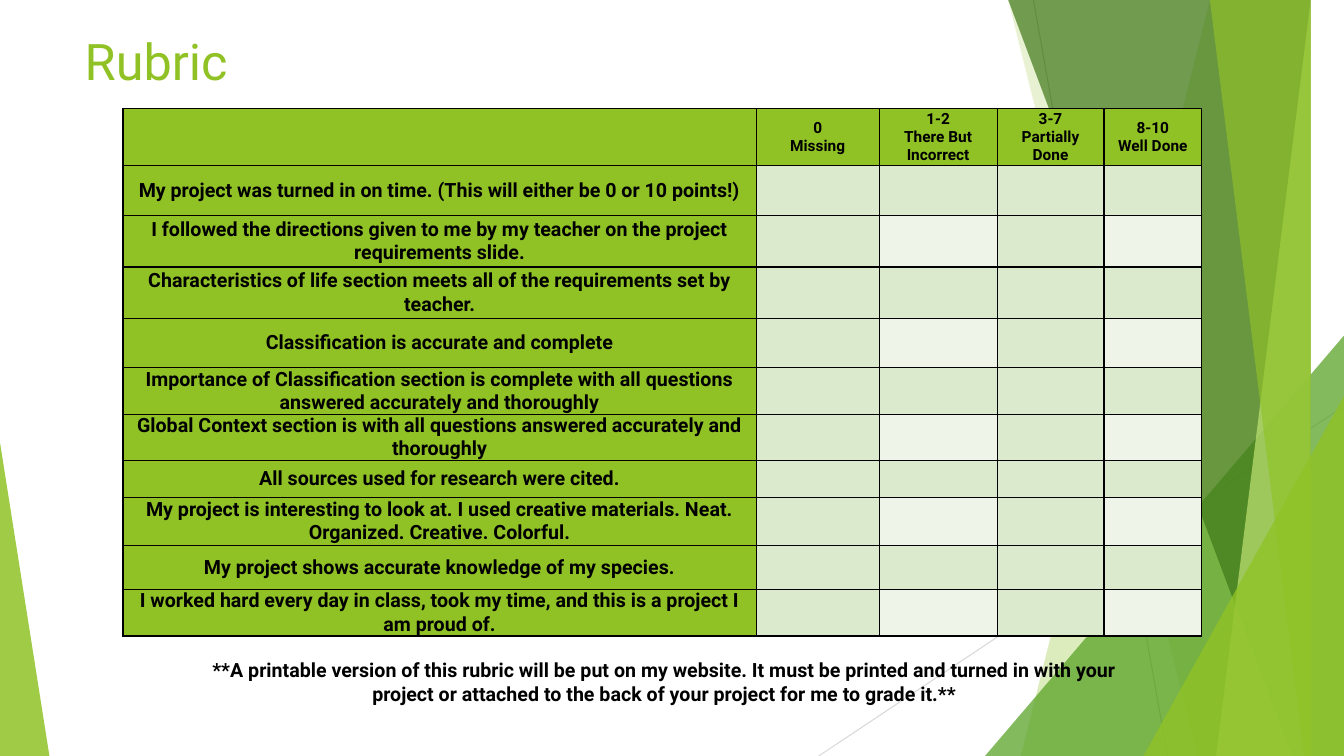
"""Build the project rubric slide."""
from dataclasses import dataclass

from lxml import etree
from pptx import Presentation
from pptx.dml.color import RGBColor
from pptx.enum.shapes import MSO_CONNECTOR, MSO_SHAPE
from pptx.enum.text import MSO_ANCHOR, MSO_AUTO_SIZE, PP_ALIGN
from pptx.oxml.ns import qn
from pptx.shapes.autoshape import Shape
from pptx.slide import Slide
from pptx.table import _Cell
from pptx.text.text import TextFrame
from pptx.util import Inches, Pt

STRAIGHT = MSO_CONNECTOR.STRAIGHT
TRIANGLE = MSO_SHAPE.ISOSCELES_TRIANGLE
TOP, MIDDLE = MSO_ANCHOR.TOP, MSO_ANCHOR.MIDDLE
LEFT, CENTER = PP_ALIGN.LEFT, PP_ALIGN.CENTER
FIXED = MSO_AUTO_SIZE.NONE
WIDE, HIGH = 13.33, 7.5


@dataclass(frozen=True)
class Theme:
    font: str = "Roboto"
    green: str = "90C226"
    leaf: str = "54A021"
    moss: str = "3F7819"
    lime: str = "C0E474"
    band: str = "DBE9CD"
    pale: str = "EEF4E8"
    ink: str = "000000"
    gray: str = "BFBFBF"
    mist: str = "D9D9D9"
    title: int = 36
    body: int = 14
    head: int = 11


THEME = Theme()


@dataclass(frozen=True)
class Ray:
    start: tuple[float, float]
    end: tuple[float, float]
    color: str


@dataclass(frozen=True)
class Shard:
    """A sheet from the slide's right edge to a slanted left side."""
    top: float
    base: float
    color: str
    alpha: int


@dataclass(frozen=True)
class Peak:
    left: float
    top: float
    width: float
    tip: float
    color: str
    alpha: int


RAYS = [
    Ray((10.25, 0), (11.58, HIGH), THEME.gray),
    Ray((WIDE, 4.03), (8.12, HIGH), THEME.mist),
]
FACETS = [
    Shard(12.28, 10.04, THEME.green, 30),
    Shard(10.5, 11.83, THEME.green, 20),
    Peak(9.77, 3.33, 3.56, 1, THEME.leaf, 72),
    Shard(10.21, 12.91, THEME.moss, 70),
    Shard(13.03, 11.92, THEME.lime, 70),
    Shard(11.96, 13.18, THEME.green, 65),
    Peak(11.34, 3.93, 1.99, 1, THEME.green, 80),
    Peak(0, 4.39, 0.49, 0, THEME.green, 85),
]
HEADS = ["", "0\nMissing", "1-2\nThere But Incorrect",
         "3-7\nPartially Done", "8-10\nWell Done"]
GOALS = [
    "My project was turned in on time. (This will either be 0 or 10 points!)",
    "I followed the directions given to me by my teacher on the project requirements slide.",
    "Characteristics of life section meets all of the requirements set by teacher.",
    "Classification is accurate and complete",
    "Importance of Classification section is complete with all questions answered accurately and thoroughly",
    "Global Context section is with all questions answered accurately and thoroughly",
    "All sources used for research were cited.",
    "My project is interesting to look at. I used creative materials. Neat. Organized. Creative. Colorful.",
    "My project shows accurate knowledge of my species.",
    "I worked hard every day in class, took my time, and this is a project I am proud of.",
]
WIDTHS = [6.28, 1.22, 1.17, 1.06, 0.97]
HEIGHTS = [0.56, 0.5, 0.51, 0.51, 0.49, 0.45, 0.45, 0.37, 0.47, 0.44, 0.39]
NOTE = ("**A printable version of this rubric will be put on my website. "
        "It must be printed and turned in with your project or attached to "
        "the back of your project for me to grade it.**")


def write(frame: TextFrame, text: str, size: int, color: str = THEME.ink,
          bold: bool = True, align: PP_ALIGN = CENTER) -> None:
    frame.text = text
    frame.word_wrap = True
    for para in frame.paragraphs:
        para.alignment = align
        para.font.name = THEME.font
        para.font.size = Pt(size)
        para.font.bold = bold
        para.font.color.rgb = RGBColor.from_string(color)


def draw_ray(slide: Slide, ray: Ray) -> None:
    ends = [Inches(n) for n in ray.start + ray.end]
    line = slide.shapes.add_connector(STRAIGHT, *ends)
    line.line.color.rgb = RGBColor.from_string(ray.color)
    line.line.width = Pt(0.75)
    etree.SubElement(line._element.spPr, qn("a:effectLst"))


def tint(shape: Shape, color: str, alpha: int) -> None:
    shape.shadow.inherit = False
    shape.line.fill.background()
    shape.fill.solid()
    shape.fill.fore_color.rgb = RGBColor.from_string(color)
    for node in shape._element.spPr.iter(qn("a:srgbClr")):
        etree.SubElement(node, qn("a:alpha"), val=str(alpha * 1000))


def draw_facet(slide: Slide, facet: Shard | Peak) -> None:
    if isinstance(facet, Shard):
        pen = slide.shapes.build_freeform(facet.top, 0, scale=Inches(1))
        pen.add_line_segments([(WIDE, 0), (WIDE, HIGH), (facet.base, HIGH)])
        shape = pen.convert_to_shape()
    else:
        shape = slide.shapes.add_shape(
            TRIANGLE, Inches(facet.left), Inches(facet.top),
            Inches(facet.width), Inches(HIGH - facet.top))
        shape.adjustments[0] = facet.tip
    tint(shape, facet.color, facet.alpha)


def style_cell(cell: _Cell, color: str) -> None:
    cell.margin_left = cell.margin_right = Inches(0.07)
    cell.margin_top = cell.margin_bottom = 0
    cell.vertical_anchor = MIDDLE
    props = cell._tc.get_or_add_tcPr()
    for side in ("lnL", "lnR", "lnT", "lnB"):
        edge = etree.SubElement(props, qn(f"a:{side}"), w=str(Pt(1)))
        fill = etree.SubElement(edge, qn("a:solidFill"))
        etree.SubElement(fill, qn("a:srgbClr"), val=THEME.ink)
    cell.fill.solid()
    cell.fill.fore_color.rgb = RGBColor.from_string(color)


def draw_table(slide: Slide) -> None:
    rows = [HEADS] + [[goal] + [""] * (len(HEADS) - 1) for goal in GOALS]
    table = slide.shapes.add_table(
        len(rows), len(HEADS), Inches(1.22), Inches(1.08),
        Inches(sum(WIDTHS)), Inches(sum(HEIGHTS))).table
    for col, width in zip(table.columns, WIDTHS):
        col.width = Inches(width)
    for r, (texts, height) in enumerate(zip(rows, HEIGHTS)):
        table.rows[r].height = Inches(height)
        for c, text in enumerate(texts):
            cell = table.cell(r, c)
            light = r % 2 == 0 and c % 2 == 0
            shade = THEME.pale if light else THEME.band
            style_cell(cell, THEME.green if r == 0 or c == 0 else shade)
            write(cell.text_frame, text, THEME.body if r else THEME.head)


def main() -> None:
    deck = Presentation()
    deck.slide_width, deck.slide_height = Inches(WIDE), Inches(HIGH)
    slide = deck.slides.add_slide(deck.slide_layouts[5])
    for ray in RAYS:
        draw_ray(slide, ray)
    for facet in FACETS:
        draw_facet(slide, facet)
    title = slide.shapes.title
    title.left, title.top = Inches(0.74), Inches(0.25)
    title.width, title.height = Inches(9.4), Inches(1.44)
    write(title.text_frame, "Rubric", THEME.title, THEME.green, False, LEFT)
    title.text_frame.vertical_anchor = TOP
    title.text_frame.auto_size = FIXED
    draw_table(slide)
    note = slide.shapes.add_textbox(
        Inches(1.82), Inches(6.48), Inches(9.54), Inches(0.57))
    write(note.text_frame, NOTE, THEME.body)
    deck.save("out.pptx")


if __name__ == "__main__":
    main()
